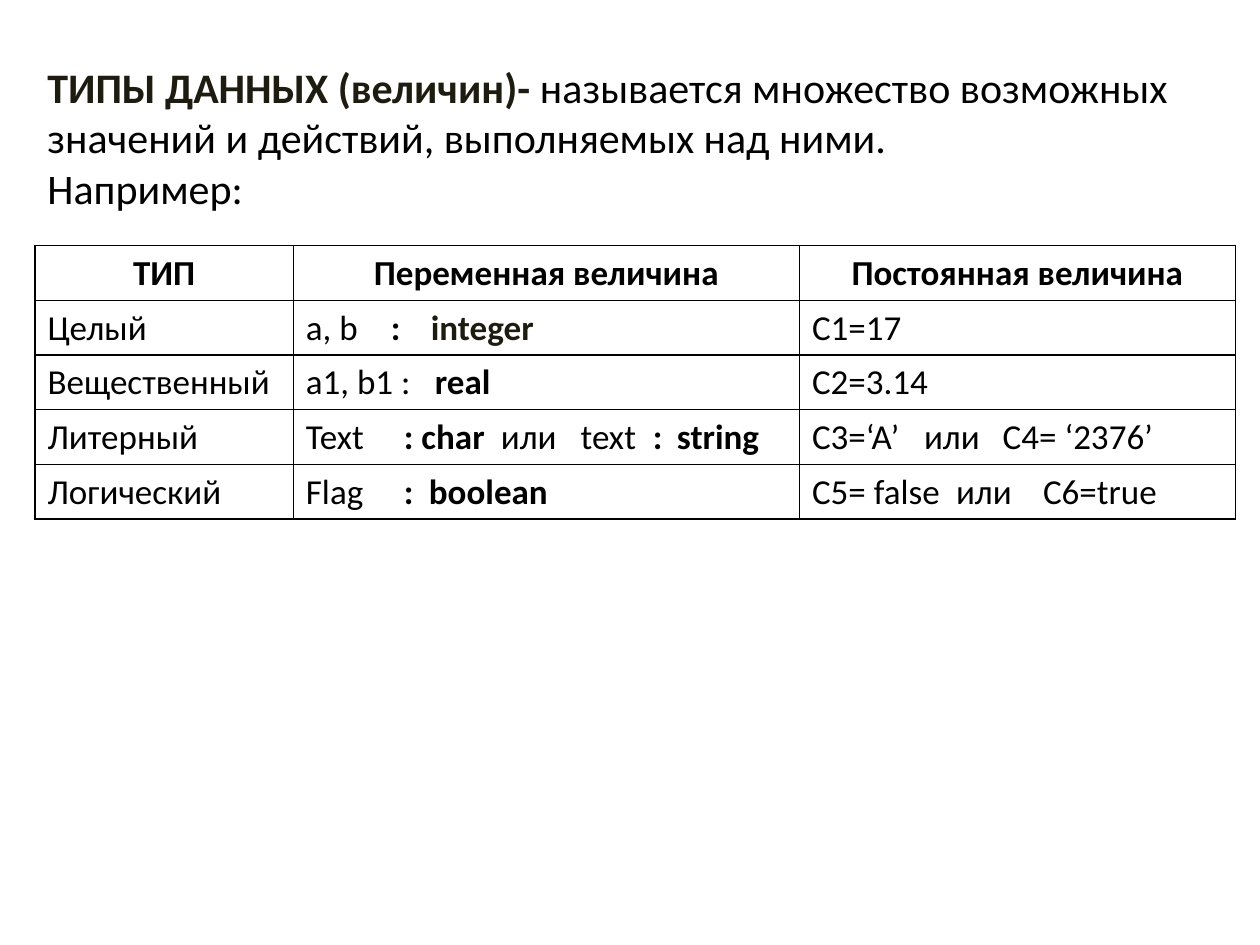
import dataclasses

import pptx
import pptx.dml.color
import pptx.enum.text
import pptx.oxml
import pptx.oxml.ns
import pptx.util

Pt = pptx.util.Pt
RGB = pptx.dml.color.RGBColor


@dataclasses.dataclass(frozen=True)
class Theme:
    """Hold the colours, font and type sizes."""
    ink: str = "000000"
    dark: str = "1E1C11"
    font: str = "Calibri"
    lead: int = 24
    body: int = 20
    rule: int = 1


THEME = Theme()
WIDTHS = (147.6, 289.2, 249.2)
HEIGHT = 31.2
HEADS = ("ТИП", "Переменная величина", "Постоянная величина")
ROWS = (
    (("Целый", False),),
    (("a, b\t", False), (":\t", True), ("integer", True, THEME.dark)),
    (("C1=17", False),),
    (("Вещественный", False),),
    (("a1, b1 :\t", False), ("real", True)),
    (("C2=3.14", False),),
    (("Литерный", False),),
    (("Text\t", False), (": char\t", True), ("или\ttext\t", False),
     (":\tstring", True)),
    (("C3=‘A’\tили\tC4= ‘2376’", False),),
    (("Логический", False),),
    (("Flag\t", False), (":\tboolean", True)),
    (("C5= false\tили\tC6=true", False),),
)
STOPS = {
    1: (48.6, 71.4), 4: (73.7,), 7: (56, 111.4, 157, 198.3, 212),
    8: (64, 109), 10: (56, 70.3), 11: (82.3, 132),
}


def add_tabs(para, stops):
    """Give a paragraph left tab stops, in points."""
    props = para._p.get_or_add_pPr()
    tabs = pptx.oxml.parse_xml(f"<a:tabLst {pptx.oxml.ns.nsdecls('a')}/>")
    for stop in stops:
        tab = tabs.makeelement(pptx.oxml.ns.qn("a:tab"),
                               {"pos": str(int(Pt(stop))), "algn": "l"})
        tabs.append(tab)
    props.append(tabs)


def write(para, runs, size, stops=()):
    """Fill a paragraph with runs of text, weight and optional colour."""
    if stops:
        add_tabs(para, stops)
    para.font.name = THEME.font
    para.font.size = Pt(size)
    agree = len({part[1:] for part in runs}) == 1
    for text, bold, *tint in runs:
        run = para.add_run()
        run.text = text
        font = para.font if agree else run.font
        font.bold = bold
        font.color.rgb = RGB.from_string(tint[0] if tint else THEME.ink)


def add_rules(cell):
    """Draw a thin line on each side of a cell."""
    props = cell._tc.get_or_add_tcPr()
    for place, side in enumerate("LRTB"):
        props.insert(place, pptx.oxml.parse_xml(
            f"<a:ln{side} {pptx.oxml.ns.nsdecls('a')} w='{int(Pt(THEME.rule))}'>"
            f"<a:solidFill><a:srgbClr val='{THEME.ink}'/></a:solidFill>"
            f"</a:ln{side}>"))


def add_lead(slide):
    """Add the definition above the table."""
    box = slide.shapes.add_textbox(Pt(20), Pt(31.5), Pt(680.4), Pt(186.5))
    frame = box.text_frame
    frame.word_wrap = True
    write(frame.paragraphs[0], (
        ("ТИПЫ ДАННЫХ (величин)- ", True, THEME.dark),
        ("называется множество возможных значений и действий, "
         "выполняемых над ними.", False)), THEME.lead)
    write(frame.add_paragraph(), (("Например:", False),), THEME.lead)


def add_types(slide):
    """Add the table of data types."""
    cols = len(WIDTHS)
    count = 1 + len(ROWS) // cols
    table = slide.shapes.add_table(count, cols, Pt(20), Pt(140.4),
                                   Pt(sum(WIDTHS)), Pt(HEIGHT * count)).table
    table.first_row = table.horz_banding = False
    for col, width in zip(table.columns, WIDTHS):
        col.width = Pt(width)
    for row in table.rows:
        row.height = Pt(HEIGHT)
    for cell in table.iter_cells():
        cell.fill.background()
        add_rules(cell)
    for col, head in enumerate(HEADS):
        para = table.cell(0, col).text_frame.paragraphs[0]
        para.alignment = pptx.enum.text.PP_ALIGN.CENTER
        write(para, ((head, True),), THEME.body)
    for spot, runs in enumerate(ROWS):
        row, col = divmod(spot, cols)
        para = table.cell(row + 1, col).text_frame.paragraphs[0]
        write(para, runs, THEME.body, STOPS.get(spot, ()))


def main():
    """Build and save the slide."""
    deck = pptx.Presentation()
    deck.slide_width, deck.slide_height = Pt(720), Pt(540)
    slide = deck.slides.add_slide(deck.slide_layouts[6])
    add_lead(slide)
    add_types(slide)
    deck.save("out.pptx")


if __name__ == "__main__":
    main()
